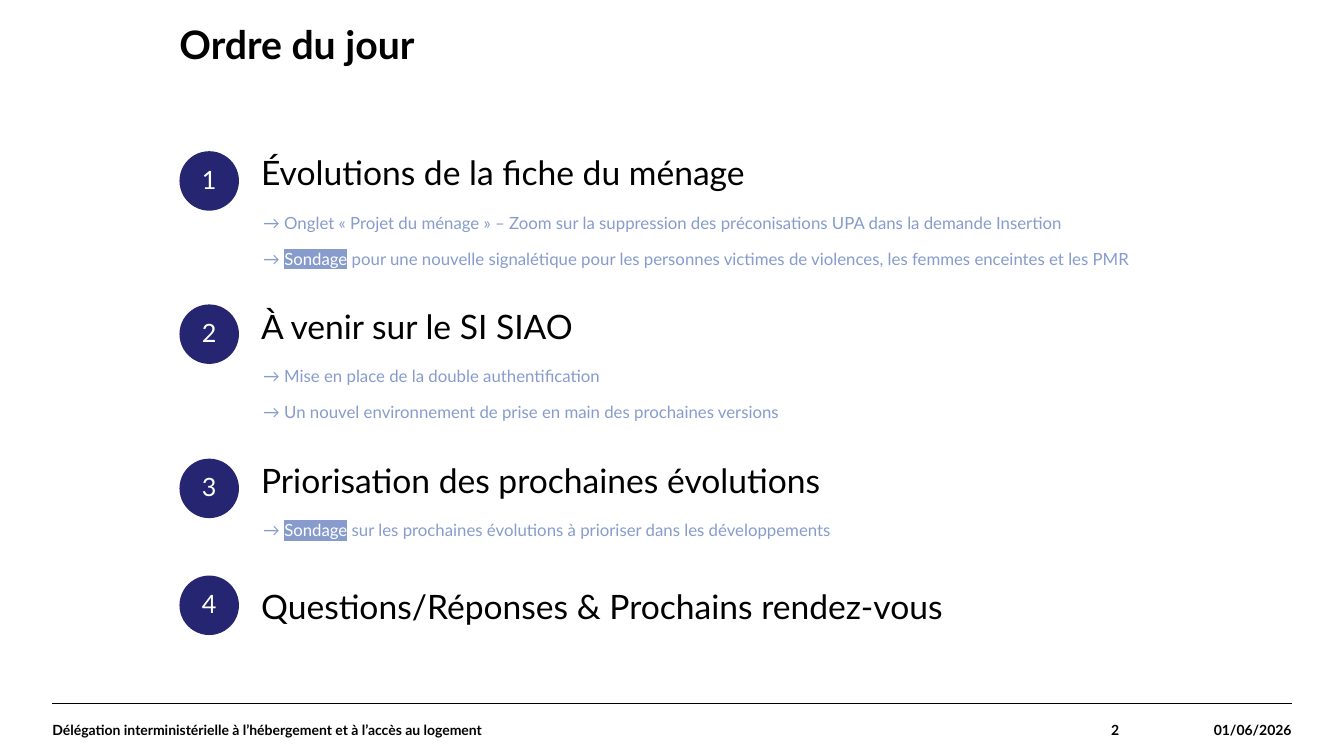
from dataclasses import dataclass

from lxml import etree
from pptx import Presentation
from pptx.dml.color import RGBColor
from pptx.enum.shapes import MSO_CONNECTOR, MSO_SHAPE
from pptx.enum.text import MSO_ANCHOR, MSO_AUTO_SIZE, PP_ALIGN
from pptx.oxml.ns import qn
from pptx.util import Emu, Pt

LEFT, CENTER, RIGHT = PP_ALIGN.LEFT, PP_ALIGN.CENTER, PP_ALIGN.RIGHT
TOP, MIDDLE, BOTTOM = MSO_ANCHOR.TOP, MSO_ANCHOR.MIDDLE, MSO_ANCHOR.BOTTOM
GROW, FIXED = MSO_AUTO_SIZE.SHAPE_TO_FIT_TEXT, MSO_AUTO_SIZE.NONE
OVAL, STRAIGHT = MSO_SHAPE.OVAL, MSO_CONNECTOR.STRAIGHT
BLANK_LAYOUT = 6
EMU_PER_PX = 9144  # 100 px to the inch


@dataclass(frozen=True)
class Theme:
    font: str = "Lato"
    ink: str = "000000"
    paper: str = "FFFFFF"
    navy: str = "262572"
    periwinkle: str = "879CCD"
    title_size: int = 28
    heading_size: int = 24
    number_size: int = 18
    detail_size: int = 12
    footer_size: int = 10


def px(length):
    return Emu(length * EMU_PER_PX)


def write_text(frame, paragraphs, *, theme, size, color, bold=False,
               align=LEFT, spacing=1.0):
    """Fill a frame; each paragraph is a list of (text, is_highlighted) spans."""
    for index, spans in enumerate(paragraphs):
        para = frame.paragraphs[0] if index == 0 else frame.add_paragraph()
        para.alignment = align
        para.line_spacing = spacing
        for text, highlighted in spans:
            span = para.add_run()
            span.text = text
            font = span.font
            font.name, font.size, font.bold = theme.font, Pt(size), bold
            font.color.rgb = RGBColor.from_string(theme.paper if highlighted else color)
            if highlighted:
                highlight = etree.Element(qn("a:highlight"))
                etree.SubElement(highlight, qn("a:srgbClr"), val=color)
                span.font._element.find(qn("a:solidFill")).addnext(highlight)


class AgendaSlide:
    def __init__(self, deck, theme):
        self.theme = theme
        self.page = deck.slides.add_slide(deck.slide_layouts[BLANK_LAYOUT])
        self.shapes = self.page.shapes

    def start_group(self):
        self.shapes = self.page.shapes.add_group_shape().shapes

    def rule(self, left, right, y):
        line = self.shapes.add_connector(STRAIGHT, px(left), px(y), px(right), px(y))
        line.line.width = Pt(0.8)
        line.line.color.rgb = RGBColor.from_string(self.theme.ink)
        etree.SubElement(line._element.spPr, qn("a:effectLst"))

    def text(self, paragraphs, left, top, width, height, *, anchor=TOP,
             indent=0, fit=GROW, **style):
        box = self.shapes.add_textbox(px(left), px(top), px(width), px(height))
        frame = box.text_frame
        frame.word_wrap = True
        frame.auto_size = fit
        frame.vertical_anchor = anchor
        frame.margin_left = px(indent)
        frame.margin_top = frame.margin_right = frame.margin_bottom = 0
        write_text(frame, paragraphs, theme=self.theme, **style)

    def number_disc(self, number, left, top, diameter):
        disc = self.shapes.add_shape(OVAL, px(left), px(top), px(diameter), px(diameter))
        disc.shadow.inherit = False
        disc.fill.solid()
        disc.fill.fore_color.rgb = RGBColor.from_string(self.theme.navy)
        disc.line.fill.background()
        disc.text_frame.vertical_anchor = MIDDLE
        write_text(disc.text_frame, [[(str(number), False)]], theme=self.theme,
                   size=self.theme.number_size, color=self.theme.paper,
                   align=CENTER, spacing=0.9)

    def footer(self, text, left, width, align):
        self.text([[(text, False)]], left, 698, width, 52, anchor=MIDDLE, fit=FIXED,
                  size=self.theme.footer_size, color=self.theme.ink,
                  bold=True, align=align)

    def section(self, number, top, heading, details):
        """Numbered heading with its details; alone, it is centred on its disc."""
        disc_size, heading_height = 59, 41
        left, width = 259, 976
        self.start_group()
        self.number_disc(number, 178, top, disc_size)
        offset = 0 if details else (disc_size - heading_height) // 2
        self.text([[(heading, False)]], left, top + offset, width, heading_height,
                  anchor=BOTTOM, size=self.theme.heading_size,
                  color=self.theme.ink, spacing=1.1)
        if details:
            self.text(details, left, top + 45, width, 36 * len(details) - 5,
                      indent=2, size=self.theme.detail_size,
                      color=self.theme.periwinkle, spacing=1.8)


def survey(subject):
    return [("→ ", False), ("Sondage", True), (subject, False)]


SECTIONS = [
    (150, "Évolutions de la fiche du ménage", [
        [("→ Onglet « Projet du ménage » – Zoom sur la suppression des "
          "préconisations UPA dans la demande Insertion", False)],
        survey(" pour une nouvelle signalétique pour les personnes victimes de "
               "violences, les femmes enceintes et les PMR"),
    ]),
    (302, "À venir sur le SI SIAO", [
        [("→ Mise en place de la double authentification", False)],
        [("→ Un nouvel environnement de prise en main des prochaines versions", False)],
    ]),
    (455, "Priorisation des prochaines évolutions", [
        survey(" sur les prochaines évolutions à prioriser dans les développements"),
    ]),
    (571, "Questions/Réponses & Prochains rendez-vous", []),
]

FOOTERS = [
    ("01/06/2026", 1110, 171, RIGHT),
    ("Délégation interministérielle à l’hébergement et à l’accès au logement",
     52, 861, LEFT),
    ("2", 913, 197, RIGHT),
]


def main():
    deck = Presentation()
    deck.slide_width, deck.slide_height = px(1333), px(750)
    theme = Theme()
    agenda = AgendaSlide(deck, theme)
    agenda.rule(52, 1281, 698)
    agenda.text([[("Ordre du jour", False)]], 178, 25, 1102, 42,
                size=theme.title_size, color=theme.ink, bold=True, spacing=0.9)
    for footer in FOOTERS:
        agenda.footer(*footer)
    for number, (top, heading, details) in enumerate(SECTIONS, start=1):
        agenda.section(number, top, heading, details)
    deck.save("out.pptx")


if __name__ == "__main__":
    main()
